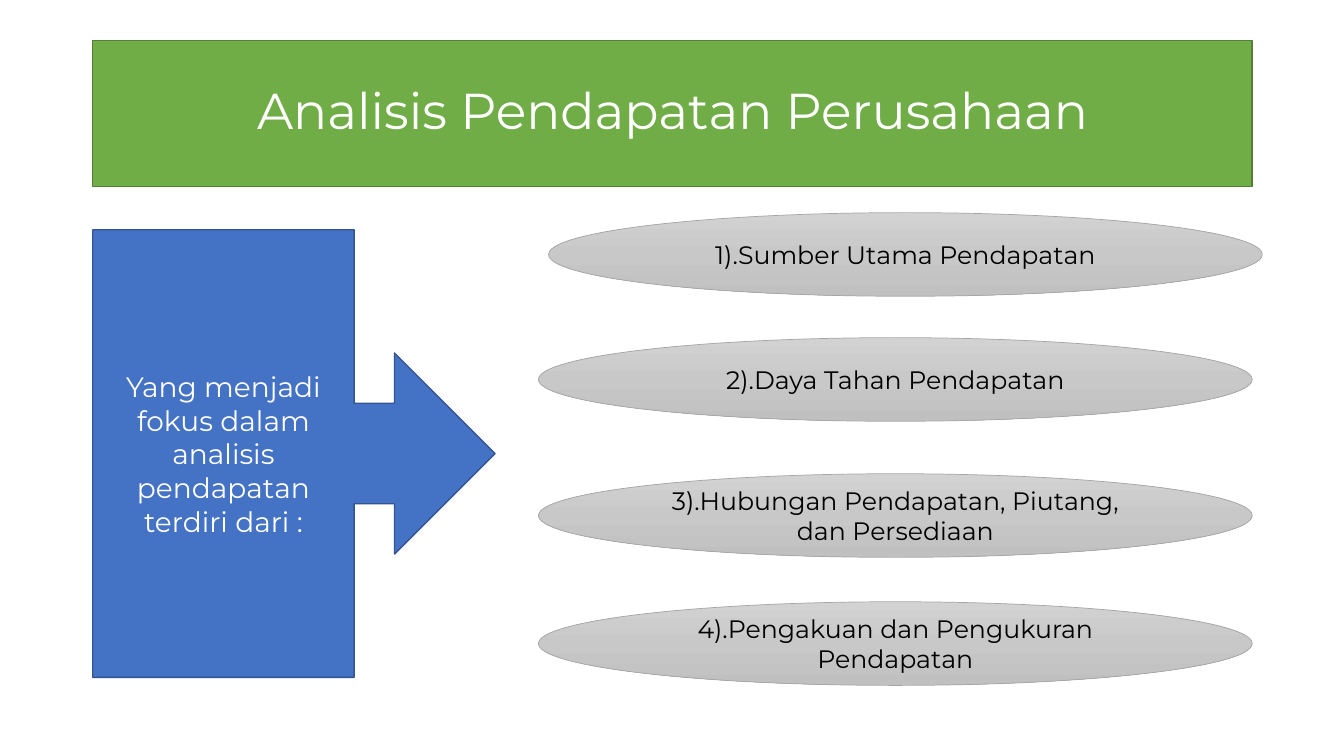
from copy import deepcopy

from pptx import Presentation
from pptx.dml.color import RGBColor
from pptx.enum import shapes, text
from pptx.util import Inches, Pt

WHITE = RGBColor(0xFF, 0xFF, 0xFF)
BLACK = RGBColor(0x00, 0x00, 0x00)
GREEN = RGBColor(0x70, 0xAD, 0x47)
DARK_GREEN = RGBColor(0x53, 0x80, 0x35)
BLUE = RGBColor(0x44, 0x72, 0xC4)
DARK_BLUE = RGBColor(0x32, 0x54, 0x91)
GREY = RGBColor(0xA5, 0xA5, 0xA5)
GREY_STOPS = [
    (0, RGBColor(0xD2, 0xD2, 0xD2)),
    (0.5, RGBColor(0xC8, 0xC8, 0xC8)),
    (1, RGBColor(0xC0, 0xC0, 0xC0)),
]

FOCUS_POINTS = [
    # left, top, wording
    (5.44, 2.11, "1).Sumber Utama Pendapatan"),
    (5.34, 3.35, "2).Daya Tahan Pendapatan"),
    (5.34, 4.7, "3).Hubungan Pendapatan, Piutang, dan Persediaan"),
    (5.34, 5.97, "4).Pengakuan dan Pengukuran Pendapatan"),
]


def add_panel(slide, kind, box, wording, size, color, line_color, line_width):
    """Place an outlined shape with centred text in box (inches)."""
    panel = slide.shapes.add_shape(kind, *[Inches(v) for v in box])
    panel.shadow.inherit = False
    panel.line.color.rgb = line_color
    panel.line.width = Pt(line_width)

    frame = panel.text_frame
    frame.word_wrap = True
    frame.vertical_anchor = text.MSO_ANCHOR.MIDDLE
    paragraph = frame.paragraphs[0]
    paragraph.alignment = text.PP_ALIGN.CENTER
    run = paragraph.add_run()
    run.text = wording
    font_format = {"name": "Montserrat", "size": Pt(size)}
    for attribute, value in font_format.items():
        setattr(run.font, attribute, value)
    run.font.color.rgb = color
    return panel


def fill_solid(panel, color):
    panel.fill.solid()
    panel.fill.fore_color.rgb = color


def fill_grey_gradient(panel):
    panel.fill.gradient()
    panel.fill.gradient_angle = 270  # light at the top
    # The default gradient has two stops; a third one is added
    stop_list = panel._element.xpath("./p:spPr/a:gradFill/a:gsLst")[0]
    stop_list.append(deepcopy(stop_list[-1]))
    for stop, (position, color) in zip(panel.fill.gradient_stops, GREY_STOPS):
        stop.position = position
        stop.color.rgb = color


def add_title(slide, box):
    title = add_panel(slide, shapes.MSO_SHAPE.RECTANGLE, box,
                      "Analisis Pendapatan Perusahaan", 36, WHITE, DARK_GREEN, 1)
    fill_solid(title, GREEN)
    title.text_frame.paragraphs[0].line_spacing = 0.9


def add_focus_callout(slide, box):
    callout = add_panel(slide, shapes.MSO_SHAPE.RIGHT_ARROW_CALLOUT, box,
                        "Yang menjadi fokus dalam analisis pendapatan terdiri dari :",
                        20, WHITE, DARK_BLUE, 1)
    fill_solid(callout, BLUE)


def add_focus_point(slide, box, wording):
    point = add_panel(slide, shapes.MSO_SHAPE.OVAL, box, wording,
                      18, BLACK, GREY, 0.5)
    fill_grey_gradient(point)


def main():
    deck = Presentation()
    deck.slide_width, deck.slide_height = Inches(13.33), Inches(7.5)
    slide = deck.slides.add_slide(deck.slide_layouts[6])

    # Title band
    add_title(slide, (0.92, 0.4, 11.5, 1.45))
    # Arrow callout on the left
    add_focus_callout(slide, (0.92, 2.28, 3.99, 4.44))
    # Four points on the right
    for left, top, wording in FOCUS_POINTS:
        add_focus_point(slide, (left, top, 7.08, 0.83), wording)

    deck.save("out.pptx")


if __name__ == "__main__":
    main()
